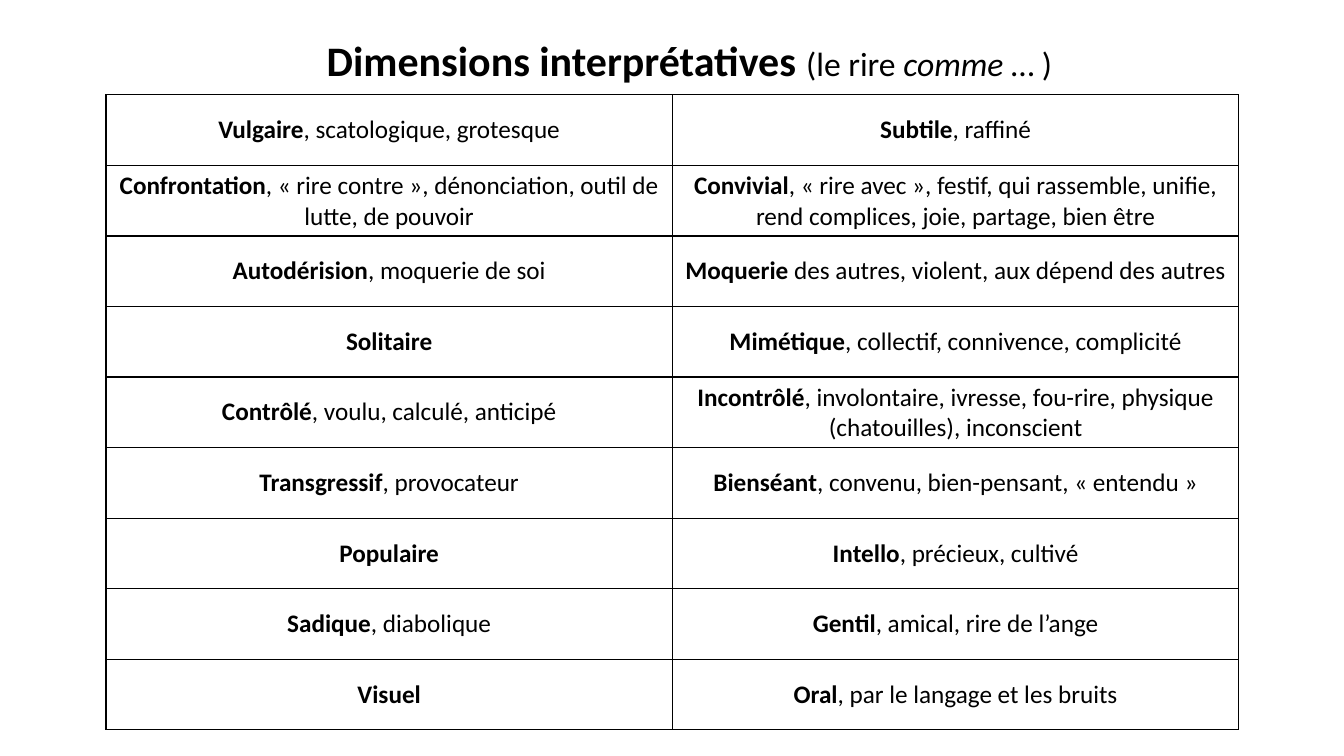
from lxml import etree
from pptx import Presentation
from pptx import util as u
from pptx.dml import color
from pptx.enum import text
from pptx.oxml import ns

FONT = "Calibri"
BLACK = "000000"
WHITE = "FFFFFF"

TITLE = [
    ("Dimensions interprétatives ", 30, True, False),
    ("(le rire ", 24, False, False),
    ("comme ", 24, False, True),
    ("… )", 24, False, False),
]

OPPOSITIONS = [
    (("Vulgaire", ", scatologique, grotesque"), ("Subtile", ", raffiné")),
    (("Confrontation", ", « rire contre », dénonciation, outil de lutte, de pouvoir"),
     ("Convivial", ", « rire avec », festif, qui rassemble, unifie, rend complices, "
                   "joie, partage, bien être")),
    (("Autodérision", ", moquerie de soi"),
     ("Moquerie", " des autres, violent, aux dépend des autres")),
    (("Solitaire", ""), ("Mimétique", ", collectif, connivence, complicité")),
    (("Contrôlé", ", voulu, calculé, anticipé"),
     ("Incontrôlé", ", involontaire, ivresse, fou-rire, physique (chatouilles), inconscient")),
    (("Transgressif", ", provocateur"),
     ("Bienséant", ", convenu, bien-pensant, « entendu »")),
    (("Populaire", ""), ("Intello", ", précieux, cultivé")),
    (("Sadique", ", diabolique"), ("Gentil", ", amical, rire de l’ange")),
    (("Visuel", ""), ("Oral", ", par le langage et les bruits")),
]


def rgb(value):
    return color.RGBColor.from_string(value)


def add_run(p, content, size, bold=False, italic=False):
    r = p.add_run()
    r.text = content
    r.font.name = FONT
    r.font.size = u.Pt(size)
    r.font.bold = bold
    r.font.italic = italic
    r.font.color.rgb = rgb(BLACK)


def add_title(s):
    sp = s.shapes.add_textbox(u.Cm(2.77), u.Cm(0.89), u.Cm(29.21), u.Cm(1.5))
    tf = sp.text_frame
    tf.word_wrap = True
    p = tf.paragraphs[0]
    p.alignment = text.PP_ALIGN.CENTER
    p.line_spacing = 0.9
    p.space_before = u.Pt(10)
    for run in TITLE:
        add_run(p, *run)


def set_borders(cell):
    tc_pr = cell._tc.get_or_add_tcPr()
    for index, side in enumerate(("a:lnL", "a:lnR", "a:lnT", "a:lnB")):
        ln = etree.Element(ns.qn(side), w=str(u.Pt(1)))
        fill = etree.SubElement(ln, ns.qn("a:solidFill"))
        etree.SubElement(fill, ns.qn("a:srgbClr"), val=BLACK)
        tc_pr.insert(index, ln)


def fill_cell(cell, keyword, details):
    cell.fill.solid()
    cell.fill.fore_color.rgb = rgb(WHITE)
    cell.vertical_anchor = text.MSO_ANCHOR.MIDDLE
    set_borders(cell)
    p = cell.text_frame.paragraphs[0]
    p.alignment = text.PP_ALIGN.CENTER
    add_run(p, keyword, 18, bold=True)
    if details:
        add_run(p, details, 18)


def add_oppositions(s):
    frame = s.shapes.add_table(len(OPPOSITIONS), 2, u.Cm(2.67), u.Cm(2.39),
                               u.Cm(28.55), u.Cm(16))
    table = frame.table
    table.first_row = False
    table.horz_banding = False
    for row, pair in enumerate(OPPOSITIONS):
        for col, (keyword, details) in enumerate(pair):
            fill_cell(table.cell(row, col), keyword, details)


def main():
    prs = Presentation()
    prs.slide_width = u.Cm(33.87)
    prs.slide_height = u.Cm(19.05)
    s = prs.slides.add_slide(prs.slide_layouts[6])
    add_title(s)
    add_oppositions(s)
    prs.save("out.pptx")


if __name__ == "__main__":
    main()
